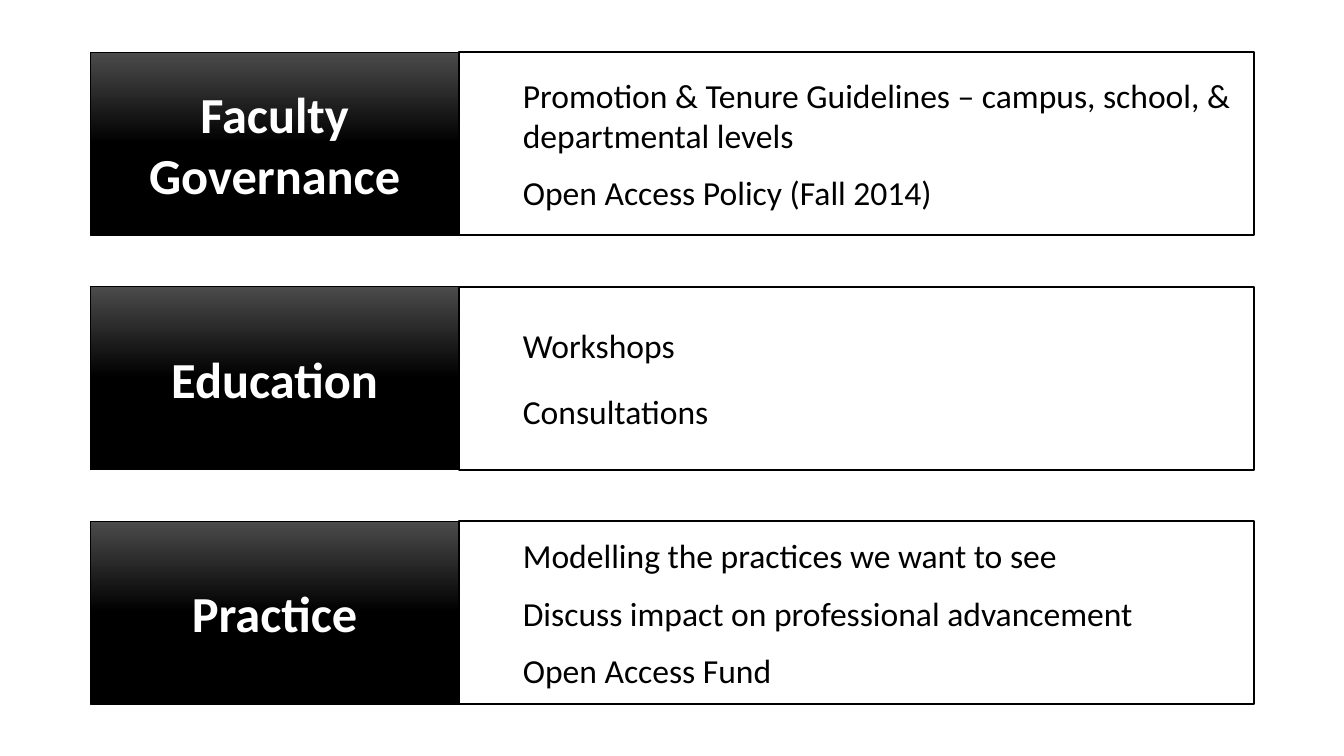
import copy
from dataclasses import dataclass

import pptx
import pptx.dml.color
import pptx.enum.shapes
import pptx.enum.text
import pptx.oxml.ns
import pptx.util

Pt = pptx.util.Pt
RGB = pptx.dml.color.RGBColor
Align = pptx.enum.text.PP_ALIGN


@dataclass(frozen=True)
class Theme:
    font: str = "Calibri"
    black: RGB = RGB(0, 0, 0)
    white: RGB = RGB(255, 255, 255)
    gray: RGB = RGB(0x4B, 0x4B, 0x4B)
    head: float = 27
    body: float = 18


theme = Theme()


def add_box(group, left, top, width, line):
    box = group.shapes.add_shape(
        pptx.enum.shapes.MSO_SHAPE.RECTANGLE,
        Pt(left), Pt(top), Pt(width), Pt(height))
    box.shadow.inherit = False
    box.line.color.rgb = theme.black
    box.line.width = Pt(line)
    box.text_frame.word_wrap = True
    box.text_frame.vertical_anchor = pptx.enum.text.MSO_ANCHOR.MIDDLE
    return box


def add_run(para, text, size, color, bold=False):
    run = para.add_run()
    run.text = text
    run.font.name = theme.font
    run.font.size = Pt(size)
    run.font.bold = bold
    run.font.color.rgb = color


rows = [
    ("Faculty Governance", 9, [
        "Promotion & Tenure Guidelines – campus, school, & departmental levels",
        "Open Access Policy (Fall 2014)"]),
    ("Education", 13.5, ["Workshops", "Consultations"]),
    ("Practice", 9, [
        "Modelling the practices we want to see",
        "Discuss impact on professional advancement",
        "Open Access Fund"]),
]
left, first, pitch, height = 48.3, 28, 125.6, 98
split, right = 246, 671.8

deck = pptx.Presentation()
deck.slide_width, deck.slide_height = Pt(720), Pt(405)
slide = deck.slides.add_slide(deck.slide_layouts[6])

for i, (title, gap, items) in enumerate(rows):
    top = first + i * pitch
    group = slide.shapes.add_group_shape()

    label = add_box(group, left, top, split - left, 0.5)
    label.fill.gradient()
    label.fill.gradient_angle = 270
    # The default gradient has two stops; a third holds black to the end.
    stops = label.element.spPr.find(".//" + pptx.oxml.ns.qn("a:gsLst"))
    stops.append(copy.deepcopy(stops[-1]))
    shades = [(0, theme.gray), (0.5, theme.black), (1, theme.black)]
    for stop, (place, color) in zip(label.fill.gradient_stops, shades):
        stop.position = place
        stop.color.rgb = color
    para = label.text_frame.paragraphs[0]
    para.alignment = Align.CENTER
    add_run(para, title, theme.head, theme.white, True)

    panel = add_box(group, split, top, right - split, 1)
    panel.fill.solid()
    panel.fill.fore_color.rgb = theme.white
    frame = panel.text_frame
    for k, item in enumerate(items):
        para = frame.add_paragraph() if k else frame.paragraphs[0]
        para.alignment = Align.LEFT
        para.space_after = Pt(gap)
        props = para._p.get_or_add_pPr()
        props.set("marL", str(Pt(27)))
        props.set("indent", "0")
        add_run(para, item, theme.body, theme.black)

deck.save("out.pptx")
